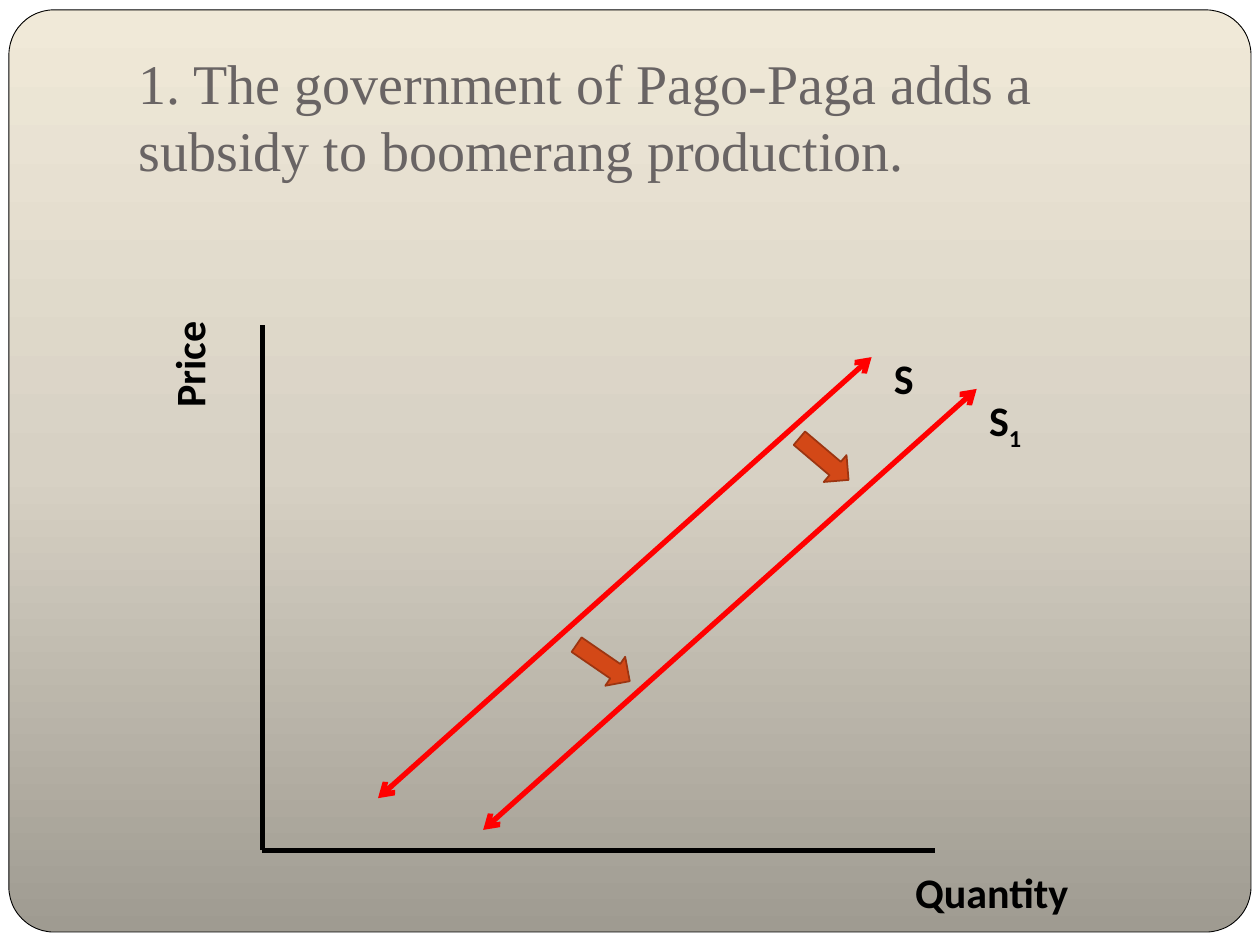
import copy

import lxml.etree
import pptx
import pptx.dml.color
import pptx.enum.shapes
import pptx.enum.text
import pptx.oxml.ns
import pptx.util

Cm = pptx.util.Cm
Pt = pptx.util.Pt
RGB = pptx.dml.color.RGBColor
SHAPE = pptx.enum.shapes.MSO_SHAPE
LINE = pptx.enum.shapes.MSO_CONNECTOR.STRAIGHT
FIT = pptx.enum.text.MSO_AUTO_SIZE
ALIGN = pptx.enum.text.PP_ALIGN
ANCHOR = pptx.enum.text.MSO_ANCHOR

WHITE = RGB(0xFF, 0xFF, 0xFF)
BLACK = RGB(0, 0, 0)
GREY = RGB(0x69, 0x64, 0x64)
RED = RGB(0xFF, 0, 0)
RUST = RGB(0xD3, 0x48, 0x17)
BROWN = RGB(0x9C, 0x35, 0x11)
SHADES = [RGB(0x9F, 0x9B, 0x91), RGB(0xD7, 0xD1, 0xC4), RGB(0xF0, 0xE9, 0xD8)]

HEAD = {"name": "Times New Roman", "size": Pt(32)}
LABEL = {"name": "Calibri", "size": Pt(24), "bold": True}


def style(font, form, color):
    for key, value in form.items():
        setattr(font, key, value)
    font.color.rgb = color


def add_sub(parent, tag, **attrs):
    return lxml.etree.SubElement(parent, pptx.oxml.ns.qn(tag), **attrs)


def add_panel(slide, left, top, width, height):
    """Rounded panel, shaded from dark at the bottom to light at the top."""
    panel = slide.shapes.add_shape(
        SHAPE.ROUNDED_RECTANGLE, Cm(left), Cm(top), Cm(width), Cm(height))
    panel.adjustments[0] = 0.049
    panel.shadow.inherit = False
    panel.line.color.rgb = BLACK
    panel.line.width = Pt(0.5)
    panel.fill.gradient()
    panel.fill.gradient_angle = 90
    first = panel.fill.gradient_stops[0]._gs
    first.addnext(copy.deepcopy(first))
    for i, stop in enumerate(panel.fill.gradient_stops):
        stop.position = i / 2
        stop.color.rgb = SHADES[i]


def add_title(slide, left, top, width, height):
    title = slide.shapes.title
    title.left, title.top = Cm(left), Cm(top)
    title.width, title.height = Cm(width), Cm(height)
    frame = title.text_frame
    form = {"word_wrap": True, "auto_size": FIT.NONE,
            "vertical_anchor": ANCHOR.BOTTOM, "margin_bottom": Cm(0.25)}
    for key, value in form.items():
        setattr(frame, key, value)
    para = frame.paragraphs[0]
    para.alignment = ALIGN.LEFT
    run = para.add_run()
    run.text = "1. The government of Pago-Paga adds a subsidy to boomerang production."
    style(run.font, HEAD, GREY)


def add_line(slide, start, end, color, heads=False):
    line = slide.shapes.add_connector(LINE, *map(Cm, start + end))
    line.line.color.rgb = color
    line.line.width = Pt(3)
    if heads:
        for tag in ("a:headEnd", "a:tailEnd"):
            add_sub(line.line._get_or_add_ln(), tag, type="arrow")
    add_sub(line._element.spPr, "a:effectLst")


def add_label(slide, left, top, width, text, sub="", turn=0):
    box = slide.shapes.add_textbox(Cm(left), Cm(top), Cm(width), Cm(1.27))
    box.rotation = turn
    frame = box.text_frame
    frame.word_wrap = True
    frame.auto_size = FIT.SHAPE_TO_FIT_TEXT
    for part in filter(None, (text, sub)):
        run = frame.paragraphs[0].add_run()
        run.text = part
        style(run.font, LABEL, BLACK)
        if part == sub:
            run.font._element.set("baseline", "-25000")


def add_graph(slide, left, top, width, height):
    """Supply graph; the box spans the two axes."""
    # Axes
    base = top + height
    add_line(slide, (left, top), (left, base), BLACK)
    add_line(slide, (left, base), (left + width, base), BLACK)
    add_label(slide, left + 12.91, base + 0.21, 4.87, "Quantity")
    add_label(slide, left - 3.18, top - 0.42, 3.39, "Price", turn=270)

    # Supply curves: the second is the first, shifted
    for dx, dy in ((0, 0), (2.12, 0.64)):
        x, y = left + 2.33 + dx, top + 9.53 + dy
        add_line(slide, (x, y), (x + 9.95, y - 8.89), RED, heads=True)
    add_label(slide, left + 12.48, top + 0.42, 2.33, "S")
    add_label(slide, left + 14.4, top + 1.27, 2.33, "S", sub="1")

    # Shift arrows
    for x, y, turn in ((10.67, 2.34, 40.3), (6.22, 6.45, 34.5)):
        arrow = slide.shapes.add_shape(
            SHAPE.RIGHT_ARROW, Cm(left + x), Cm(top + y), Cm(1.3), Cm(0.71))
        arrow.rotation = turn
        arrow.shadow.inherit = False
        arrow.fill.solid()
        arrow.fill.fore_color.rgb = RUST
        arrow.line.color.rgb = BROWN
        arrow.line.width = Pt(1)


def main():
    deck = pptx.Presentation()
    deck.slide_width, deck.slide_height = Cm(25.4), Cm(19.05)
    slide = deck.slides.add_slide(deck.slide_layouts[5])
    slide.background.fill.solid()
    slide.background.fill.fore_color.rgb = WHITE
    add_panel(slide, 0.18, 0.2, 25.04, 18.59)
    # Bring the title in front of the panel
    slide.shapes._spTree.append(slide.shapes.title._element)
    add_title(slide, 2.54, 0.76, 21.59, 3.18)
    add_graph(slide, 5.29, 6.56, 13.55, 10.58)
    deck.save("out.pptx")


if __name__ == "__main__":
    main()
